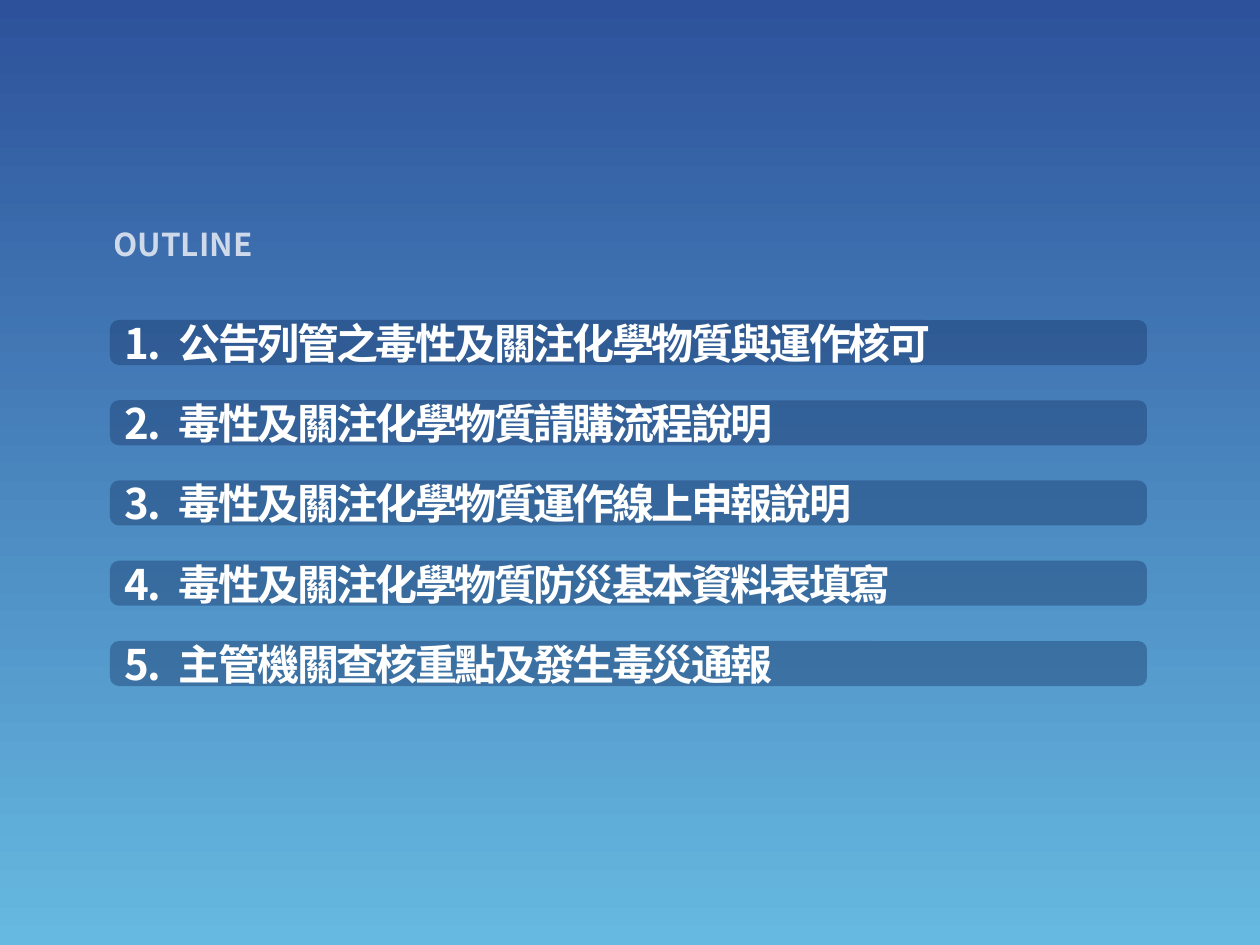
from lxml import etree
from pptx import Presentation
from pptx.dml.color import RGBColor
from pptx.enum.shapes import MSO_SHAPE
from pptx.enum.text import MSO_ANCHOR, PP_ALIGN
from pptx.oxml.ns import qn
from pptx.util import Pt

EMU_PER_PIXEL = 914400 / 126
FONT = "Noto Sans CJK SC"
TOPICS = [
    "公告列管之毒性及關注化學物質與運作核可",
    "毒性及關注化學物質請購流程說明",
    "毒性及關注化學物質運作線上申報說明",
    "毒性及關注化學物質防災基本資料表填寫",
    "主管機關查核重點及發生毒災通報",
]


def px(length):
    return round(length * EMU_PER_PIXEL)


def set_color(color_format, hex_color, opacity=100):
    color_format.rgb = RGBColor.from_string(hex_color)
    if opacity < 100:
        # The private-free route to the colour element is its parent's fill
        return str(opacity * 1000)
    return None


def paint(fill, owner, hex_color, opacity=100):
    """Solid fill; owner is the XML element that holds it."""
    fill.solid()
    fill.fore_color.rgb = RGBColor.from_string(hex_color)
    if opacity < 100:
        color = owner.find(qn("a:solidFill")).find(qn("a:srgbClr"))
        etree.SubElement(color, qn("a:alpha"), val=str(opacity * 1000))


def format_run(run, size, opacity=100, spacing=None):
    run.font.size = Pt(size)
    run.font.bold = True
    run.font.name = FONT
    properties = run.font.fill and run._r.get_or_add_rPr()
    paint(run.font.fill, properties, "FFFFFF", opacity)
    etree.SubElement(properties, qn("a:ea"), typeface=FONT)
    if spacing is not None:
        properties.set("spc", str(round(spacing * 100)))


def add_background(slide):
    fill = slide.background.fill
    fill.gradient()
    fill.gradient_angle = 270
    for stop, hex_color in zip(fill.gradient_stops, ("2D529B", "66B9E1")):
        stop.color.rgb = RGBColor.from_string(hex_color)


def add_heading(slide, left, top, width, height):
    shape = slide.shapes.add_textbox(px(left), px(top), px(width), px(height))
    text_frame = shape.text_frame
    text_frame.text = "OUTLINE"
    text_frame.word_wrap = False
    paragraph = text_frame.paragraphs[0]
    paragraph.alignment = PP_ALIGN.CENTER
    format_run(paragraph.runs[0], 18, opacity=75)


def add_topic_bar(slide, text, left, top, width, height):
    shape = slide.shapes.add_shape(
        MSO_SHAPE.ROUNDED_RECTANGLE, px(left), px(top), px(width), px(height))
    shape.adjustments[0] = 0.195
    shape.shadow.inherit = False
    shape.line.fill.background()
    paint(shape.fill, shape._element.spPr, "153365", 40)

    text_frame = shape.text_frame
    text_frame.text = text
    text_frame.word_wrap = True
    text_frame.vertical_anchor = MSO_ANCHOR.MIDDLE
    paragraph = text_frame.paragraphs[0]
    paragraph.alignment = PP_ALIGN.LEFT
    # Hanging indent: the tab after the number leads to the topic
    properties = paragraph._p.get_or_add_pPr()
    properties.set("marL", str(px(54)))
    properties.set("indent", str(-px(54)))
    format_run(paragraph.runs[0], 24, spacing=-1.5)


def add_topic_list(slide, left, top, width, height, bar_height=45):
    pitch = (height - bar_height) / (len(TOPICS) - 1)
    for index, topic in enumerate(TOPICS):
        add_topic_bar(slide, f"{index + 1}.\t{topic}",
                      left, top + index * pitch, width, bar_height)


def main():
    presentation = Presentation()
    presentation.slide_width = px(1260)
    presentation.slide_height = px(945)
    slide = presentation.slides.add_slide(presentation.slide_layouts[6])

    add_background(slide)
    add_heading(slide, 59, 219, 248, 54)
    add_topic_list(slide, 110, 320, 1037, 366)

    presentation.save("out.pptx")


if __name__ == "__main__":
    main()
